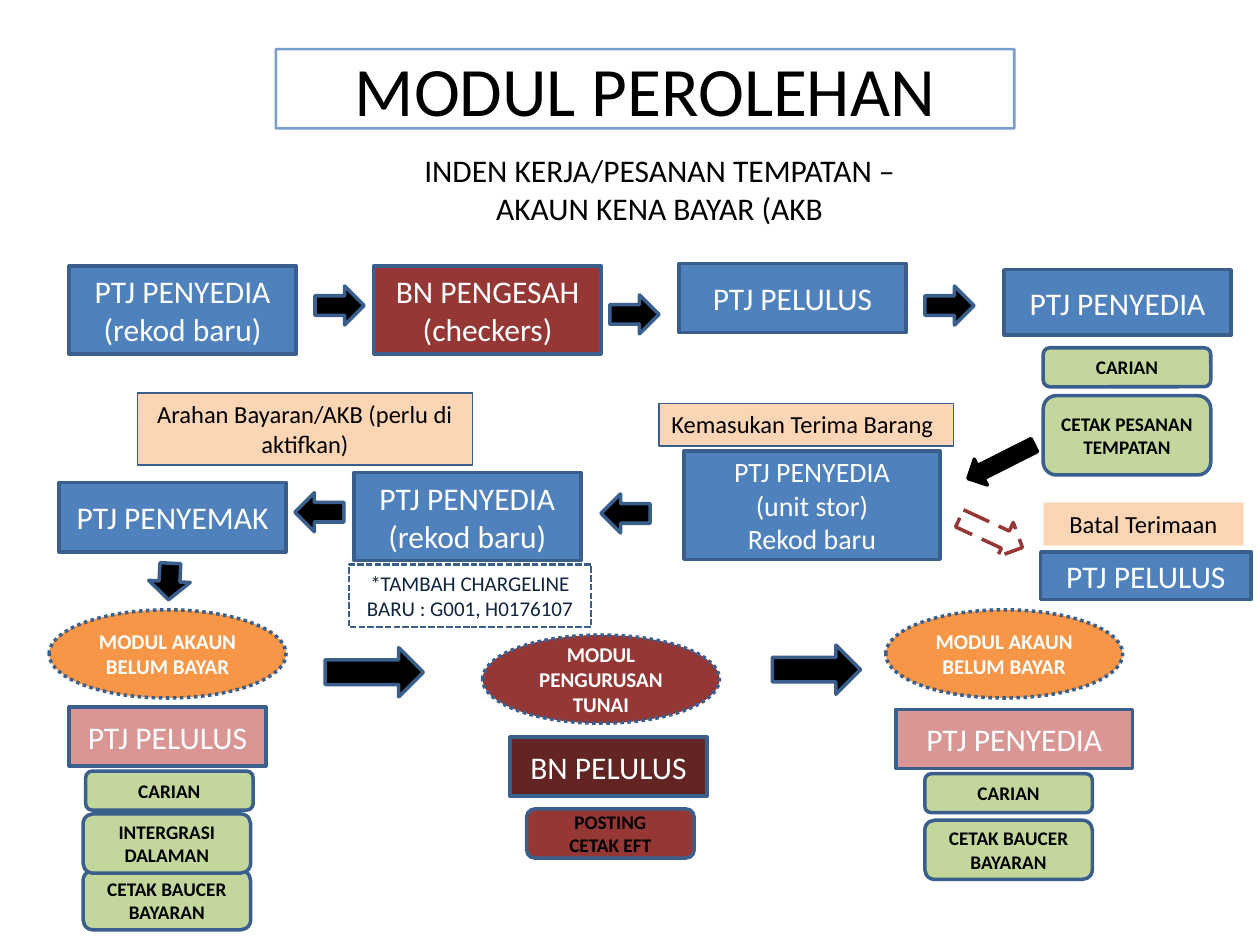
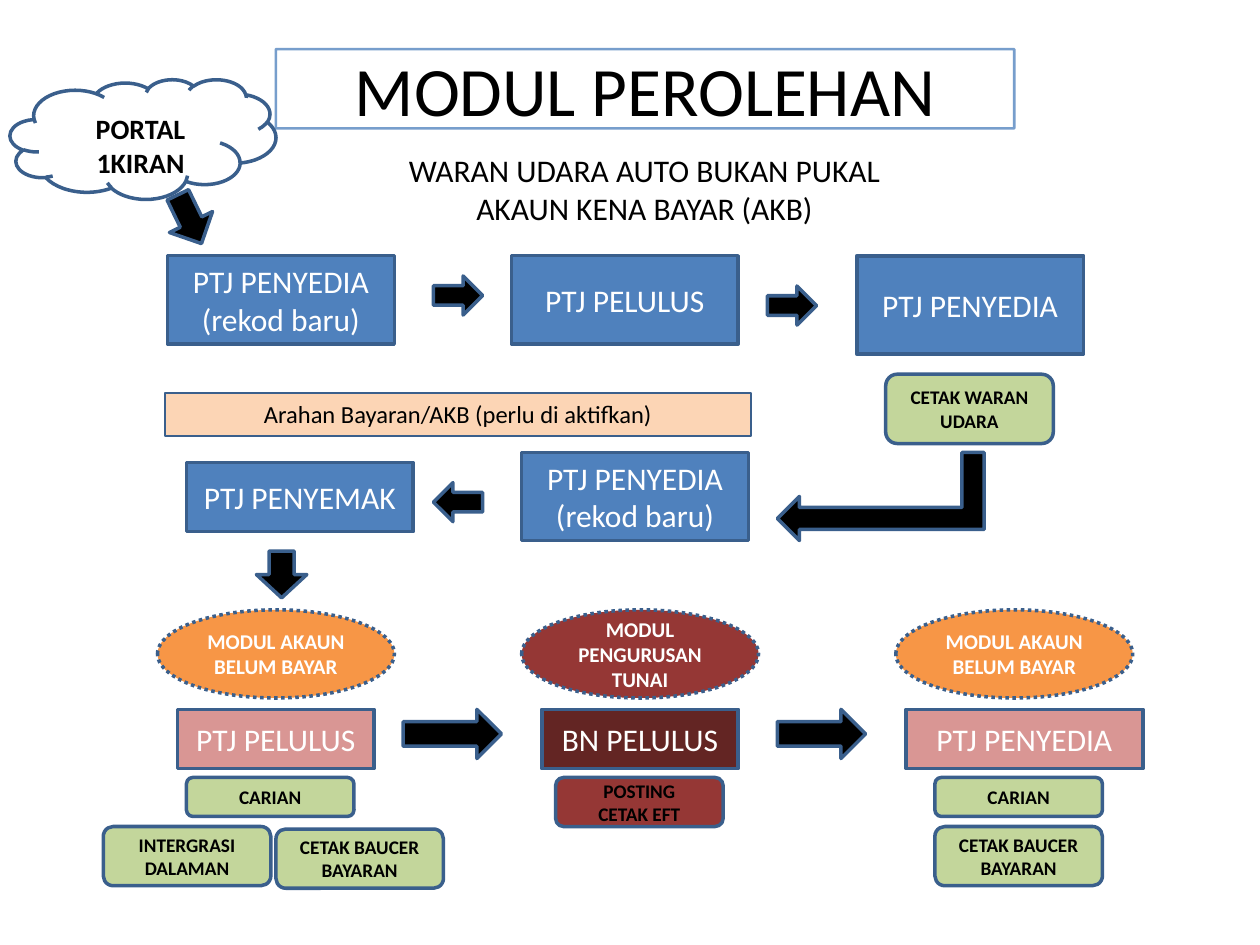
"""Build two flow charts of the procurement module."""
from pptx import Presentation
from pptx.dml.color import RGBColor
from pptx.enum.dml import MSO_LINE
from pptx.enum.shapes import MSO_SHAPE
from pptx.enum.text import MSO_ANCHOR, PP_ALIGN
from pptx.oxml.ns import qn
from pptx.util import Inches, Pt
from lxml.etree import SubElement

RECT, ROUND = MSO_SHAPE.RECTANGLE, MSO_SHAPE.ROUNDED_RECTANGLE
OVAL, ARROW = MSO_SHAPE.OVAL, MSO_SHAPE.RIGHT_ARROW
BLUE, NAVY, GREEN, PEACH = "4F81BD", "3A5F8C", "C3D69B", "FCD5B5"
RED, DARK, PINK, GOLD = "953735", "632523", "D99694", "F79646"
BLACK, WHITE = "000000", "FFFFFF"
MID, TOP = MSO_ANCHOR.MIDDLE, MSO_ANCHOR.TOP
DOT, DASH, LONG = MSO_LINE.ROUND_DOT, MSO_LINE.SQUARE_DOT, MSO_LINE.LONG_DASH

# form, width, height, fill, line, line width, dash, text size, text colour, bold, anchor
STYLES = {
    "title": (RECT, 5.86, 0.63, None, BLUE, 1.5, None, 39.6, BLACK, False, MID),
    "topic": (RECT, 4.15, 0.71, None, None, 0, None, 18, BLACK, False, TOP),
    "step": (RECT, 1.8, 0.7, BLUE, NAVY, 2, None, 18, WHITE, False, MID),
    "check": (RECT, 1.8, 0.7, RED, NAVY, 2, None, 18, WHITE, False, MID),
    "store": (RECT, 2.03, 0.86, BLUE, NAVY, 2, None, 16, WHITE, False, MID),
    "pink": (RECT, 1.56, 0.47, PINK, NAVY, 2, None, 18, WHITE, False, MID),
    "dark": (RECT, 1.56, 0.47, DARK, NAVY, 2, None, 18, WHITE, False, MID),
    "task": (ROUND, 1.33, 0.47, GREEN, NAVY, 2, None, 11, BLACK, True, MID),
    "find": (ROUND, 1.33, 0.31, GREEN, NAVY, 2, None, 11, BLACK, True, MID),
    "post": (ROUND, 1.33, 0.39, RED, NAVY, 2, None, 11, BLACK, True, MID),
    "bill": (OVAL, 1.88, 0.7, GOLD, NAVY, 2, DOT, 12, WHITE, True, MID),
    "cash": (OVAL, 1.88, 0.7, RED, NAVY, 2, DOT, 12, WHITE, True, MID),
    "note": (RECT, 2.66, 0.34, PEACH, NAVY, 0.75, None, 14, BLACK, False, TOP),
    "void": (RECT, 1.59, 0.34, PEACH, "FDEADA", 0.75, None, 14, BLACK, False, TOP),
    "hint": (RECT, 1.92, 0.5, None, NAVY, 1.25, DASH, 12, "0F243E", False, TOP),
    "cloud": (MSO_SHAPE.CLOUD, 2.11, 0.95, None, NAVY, 2, None, 16, BLACK, True, MID),
    "label": (RECT, 1.65, 0.37, None, None, 0, None, 16, BLACK, True, TOP),
    "arrow": (ARROW, 0.39, 0.31, BLACK, NAVY, 2, None, 18, WHITE, False, MID),
    "slant": (ARROW, 0.59, 0.23, BLACK, BLACK, 2, None, 18, WHITE, False, MID),
    "back": (ARROW, 0.55, 0.3, None, RED, 2, LONG, 18, WHITE, False, MID),
    "bent": (MSO_SHAPE.BENT_UP_ARROW, 0.7, 1.64, BLACK, NAVY, 2, None, 18, WHITE, False, MID),
}
MAKER, BUYER = "PTJ PENYEDIA", "PTJ PENYEDIA\n(rekod baru)"
BILL, CASH = "MODUL AKAUN BELUM BAYAR", "MODUL PENGURUSAN TUNAI"
PAY, SLIP = "Arahan Bayaran/AKB (perlu di aktifkan)", "CETAK BAUCER BAYARAN"
POST, LINK = "POSTING\nCETAK EFT", "INTERGRASI DALAMAN"

FLOWS = [
    [
        ("note", "Kemasukan Terima Barang", 5.23, 3.2, 2.34),
        ("step", BUYER, 0.55, 2.11),
        ("check", "BN PENGESAH\n(checkers)", 2.97, 2.11),
        ("step", "PTJ PELULUS", 5.39, 2.09, 1.8, 0.55),
        ("task", "CETAK PESANAN TEMPATAN", 8.28, 3.14, 1.33, 0.63),
        ("step", MAKER, 7.97, 2.14, 1.8, 0.52),
        ("find", "CARIAN", 8.28, 2.76),
        ("store", "PTJ PENYEDIA\n(unit stor)\nRekod baru", 5.43, 3.58),
        ("step", "PTJ PENYEMAK", 0.47, 3.83, 1.8, 0.55),
        ("step", BUYER, 2.81, 3.75),
        ("topic", "INDEN KERJA/PESANAN TEMPATAN – AKAUN KENA BAYAR (AKB", 3.16, 1.15),
        ("pink", "PTJ PELULUS", 0.55, 5.61),
        ("bill", BILL, 0.39, 4.84),
        ("task", SLIP, 7.34, 6.51),
        ("find", "CARIAN", 0.68, 6.12),
        ("cash", CASH, 3.83, 5.04),
        ("dark", "BN PELULUS", 4.05, 5.85),
        ("post", POST, 4.18, 6.42),
        ("bill", BILL, 7.03, 4.84),
        ("pink", MAKER, 7.11, 5.63, 1.88),
        ("find", "CARIAN", 7.34, 6.14),
        ("task", SLIP, 0.66, 6.91),
        ("arrow", "", 2.5, 2.27),
        ("arrow", "", 4.84, 2.34),
        ("arrow", "", 7.34, 2.27),
        ("arrow", "", 4.77, 3.92, 0.39, 0.31, 180),
        ("arrow", "", 2.34, 3.91, 0.39, 0.31, 180),
        ("arrow", "", 1.2, 4.45, 0.29, 0.33, 92.9),
        ("arrow", "", 2.58, 5.14, 0.78, 0.39),
        ("arrow", "", 6.13, 5.12, 0.7, 0.39),
        ("slant", "", 7.65, 3.55, 0.59, 0.23, 153.2),
        ("back", "", 7.59, 4.08, 0.55, 0.3, 24.9),
        ("void", "Batal Terimaan", 8.28, 3.99),
        ("step", "PTJ PELULUS", 8.26, 4.38, 1.67, 0.38),
        ("hint", "*TAMBAH CHARGELINE BARU : G001, H0176107", 2.77, 4.48),
        ("task", LINK, 0.66, 6.46),
        ("note", PAY, 1.09, 3.12, 2.66, 0.57),
    ],
    [
        ("step", BUYER, 1.33, 2.03),
        ("step", "PTJ PELULUS", 4.06, 2.03),
        ("task", "CETAK WARAN UDARA", 7.03, 2.97, 1.33, 0.55),
        ("step", MAKER, 6.8, 2.03, 1.8, 0.78),
        ("step", "PTJ PENYEMAK", 1.48, 3.67, 1.8, 0.55),
        ("step", BUYER, 4.14, 3.59),
        ("topic", "WARAN UDARA AUTO BUKAN PUKAL AKAUN KENA BAYAR (AKB)", 2.84, 1.15, 4.55, 1.01),
        ("pink", "PTJ PELULUS", 1.41, 5.63),
        ("bill", BILL, 1.25, 4.84),
        ("task", SLIP, 7.42, 6.56),
        ("find", "CARIAN", 1.48, 6.17),
        ("cash", CASH, 4.14, 4.84),
        ("dark", "BN PELULUS", 4.3, 5.63),
        ("post", POST, 4.41, 6.17),
        ("bill", BILL, 7.11, 4.84),
        ("pink", MAKER, 7.19, 5.63, 1.88),
        ("find", "CARIAN", 7.42, 6.17),
        ("task", SLIP, 2.19, 6.58),
        ("arrow", "", 3.44, 2.19),
        ("arrow", "", 6.09, 2.27),
        ("arrow", "", 3.2, 5.63, 0.78, 0.39),
        ("arrow", "", 6.17, 5.63, 0.7, 0.39),
        ("arrow", "", 2.05, 4.36, 0.37, 0.4, 90),
        ("bent", "", 6.64, 3.12, 0.7, 1.64, 90),
        ("arrow", "", 3.44, 3.83, 0.39, 0.31, 180),
        ("cloud", "", 0.08, 0.63),
        ("label", "PORTAL 1KIRAN", 0.29, 0.84),
        ("arrow", "", 1.29, 1.55, 0.43, 0.38, 64.1),
        ("task", LINK, 0.82, 6.56),
        ("note", PAY, 1.31, 3.12, 4.65),
    ],
]


def paint(part, tint):
    """Set a solid colour, or none."""
    if tint:
        part.solid()
        part.fore_color.rgb = RGBColor.from_string(tint)
    else:
        part.background()


def put(slide, kind, text, left, top, width=None, height=None, turn=0):
    """Add one styled box or arrow."""
    form, wide, high, fill, line, weight, dash, size, ink, bold, anchor = STYLES[kind]
    box = (Inches(n) for n in (left, top, width or wide, height or high))
    if kind in ("topic", "label"):
        shape = slide.shapes.add_textbox(*box)
    else:
        shape = slide.shapes.add_shape(form, *box)
        shape.shadow.inherit = False
        paint(shape.fill, fill)
        paint(shape.line.fill, line)
        shape.line.width = Pt(weight)
        if dash:
            shape.line.dash_style = dash
    shape.rotation = turn
    if text:
        frame = shape.text_frame
        frame.word_wrap = kind != "label"
        frame.vertical_anchor = anchor
        frame.text = text
        for para in frame.paragraphs:
            para.alignment = PP_ALIGN.CENTER
            para.font.name, para.font.size, para.font.bold = "Calibri", Pt(size), bold
            paint(para.font.fill, ink)
    return shape


deck = Presentation()
deck.slide_width, deck.slide_height = Inches(10), Inches(7.5)
for flow in FLOWS:
    slide = deck.slides.add_slide(deck.slide_layouts[6])
    title = put(slide, "title", "MODUL PEROLEHAN", 2.19, 0.39)
    tint = title.element.spPr.find(qn("a:ln")).find(".//" + qn("a:srgbClr"))
    SubElement(tint, qn("a:alpha"), val="76000")
    for item in flow:
        shape = put(slide, *item)
        if item[0] == "bent":
            shape.element.spPr.find(qn("a:xfrm")).set("flipV", "1")
        if item[1].startswith("Kemasukan"):
            shape.text_frame.paragraphs[0].alignment = PP_ALIGN.LEFT
deck.save("out.pptx")
